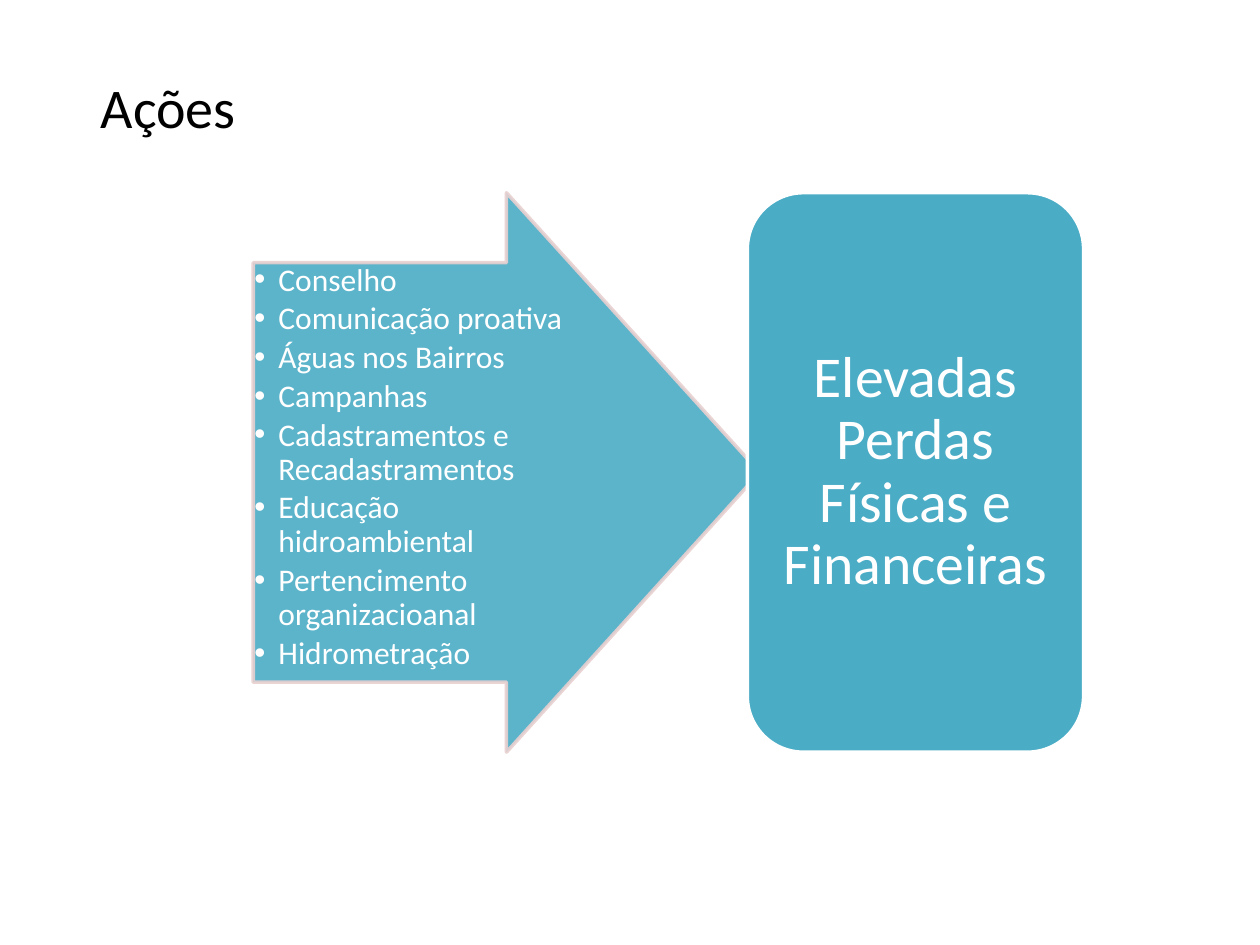
from dataclasses import dataclass

from lxml.etree import SubElement
from pptx import Presentation
from pptx.dml.color import RGBColor
from pptx.enum.shapes import MSO_SHAPE
from pptx.enum.text import MSO_ANCHOR, MSO_AUTO_SIZE, PP_ALIGN
from pptx.oxml.ns import qn
from pptx.util import Inches, Pt


@dataclass(frozen=True)
class Theme:
    font: str = "Calibri"
    title_size: int = 32
    list_size: int = 18
    result_size: int = 33
    line_width: int = 2
    opacity: int = 90
    black: RGBColor = RGBColor(0, 0, 0)
    white: RGBColor = RGBColor(255, 255, 255)
    teal: RGBColor = RGBColor(0x4B, 0xAC, 0xC6)
    blush: RGBColor = RGBColor(0xE8, 0xD0, 0xD0)


@dataclass(frozen=True)
class Box:
    left: float
    top: float
    width: float
    height: float

    def share(self, left, top, width, height):
        return Box(
            self.left + left * self.width,
            self.top + top * self.height,
            width * self.width,
            height * self.height,
        )

    def lengths(self):
        return [Inches(value) for value in (self.left, self.top, self.width, self.height)]


THEME = Theme()
PAGE = Box(0, 0, 10, 7.5)
ACTIONS = [
    "Conselho",
    "Comunicação proativa",
    "Águas nos Bairros",
    "Campanhas",
    "Cadastramentos e Recadastramentos",
    "Educação hidroambiental",
    "Pertencimento organizacioanal",
    "Hidrometração",
]


def place(shape, box):
    shape.left, shape.top, shape.width, shape.height = box.lengths()


def set_frame(frame, anchor, horizontal=0.1, vertical=0.05):
    frame.word_wrap = True
    frame.auto_size = MSO_AUTO_SIZE.NONE
    frame.vertical_anchor = anchor
    frame.margin_left = frame.margin_right = Inches(horizontal)
    frame.margin_top = frame.margin_bottom = Inches(vertical)


def style_paragraph(paragraph, size, color, alignment=PP_ALIGN.LEFT):
    paragraph.alignment = alignment
    paragraph.font.name = THEME.font
    paragraph.font.size = Pt(size)
    paragraph.font.color.rgb = color


def add_block(slide, preset, box, line_color):
    shape = slide.shapes.add_shape(preset, *box.lengths())
    shape.shadow.inherit = False
    shape.fill.solid()
    shape.fill.fore_color.rgb = THEME.teal
    shape.line.color.rgb = line_color
    shape.line.width = Pt(THEME.line_width)
    return shape


def make_translucent(shape):
    properties = shape.element.spPr
    for fill in (properties.find(qn("a:solidFill")), properties.find(qn("a:ln")).find(qn("a:solidFill"))):
        SubElement(fill[0], qn("a:alpha"), val=str(THEME.opacity * 1000))


def fill_title(slide, box):
    title = slide.shapes.title
    place(title, box)
    set_frame(title.text_frame, MSO_ANCHOR.TOP)
    title.text_frame.text = "Ações"
    style_paragraph(title.text_frame.paragraphs[0], THEME.title_size, THEME.black)


def add_actions(slide, box):
    arrow = add_block(slide, MSO_SHAPE.RIGHT_ARROW, box, THEME.blush)
    arrow.adjustments[0] = 0.75
    arrow.adjustments[1] = 0.5
    make_translucent(arrow)

    body = slide.placeholders[1]
    arrow.element.addnext(body.element)
    place(body, box.share(0, 0.125, 0.625, 0.75))
    frame = body.text_frame
    set_frame(frame, MSO_ANCHOR.TOP, 0.01, 0.01)
    frame.text = "\n".join(ACTIONS)
    for paragraph in frame.paragraphs:
        properties = paragraph._p.get_or_add_pPr()
        properties.set("marL", str(Inches(0.19)))
        properties.set("indent", str(-Inches(0.19)))
        paragraph.line_spacing = 0.9
        paragraph.space_before = Pt(0)
        paragraph.space_after = Pt(2.7)
        style_paragraph(paragraph, THEME.list_size, THEME.white)


def add_result(slide, box):
    block = add_block(slide, MSO_SHAPE.ROUNDED_RECTANGLE, box, THEME.white)
    frame = block.text_frame
    set_frame(frame, MSO_ANCHOR.MIDDLE, 0.14, 0.07)
    frame.text = "Elevadas Perdas Físicas e Financeiras"
    paragraph = frame.paragraphs[0]
    paragraph.line_spacing = 0.9
    style_paragraph(paragraph, THEME.result_size, THEME.white, PP_ALIGN.CENTER)


def main():
    presentation = Presentation()
    presentation.slide_width = Inches(PAGE.width)
    presentation.slide_height = Inches(PAGE.height)
    slide = presentation.slides.add_slide(presentation.slide_layouts[1])
    diagram = Box(2.01, 1.53, 6.59, 4.44)
    fill_title(slide, PAGE.share(0.07, 0.07, 0.87, 0.63))
    add_actions(slide, diagram.share(0, 0, 0.61, 1))
    add_result(slide, diagram.share(0.595, 0, 0.405, 1))
    presentation.save("out.pptx")


if __name__ == "__main__":
    main()
